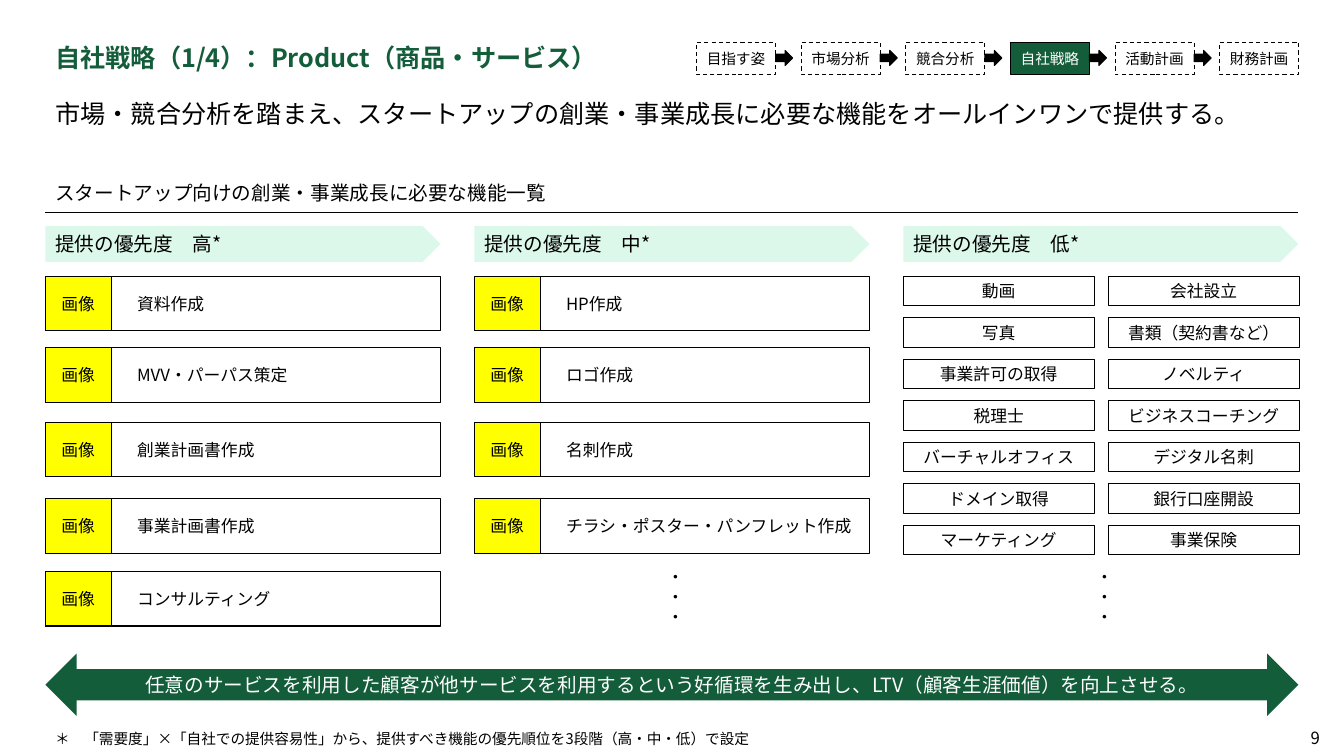
from pptx import Presentation
from pptx.dml.color import RGBColor
from pptx.enum.dml import MSO_LINE
from pptx.enum.shapes import MSO_CONNECTOR, MSO_SHAPE as Preset
from pptx.enum.text import MSO_ANCHOR as Anchor, PP_ALIGN as Align
from pptx.oxml.ns import qn
from pptx.util import Pt

BLACK = RGBColor(0, 0, 0)
WHITE = RGBColor(255, 255, 255)
GREEN = RGBColor(0x14, 0x5D, 0x3A)
MINT = RGBColor(0xDC, 0xF8, 0xEA)
YELLOW = RGBColor(255, 255, 0)

LEFT, WIDTH = 32.4, 895
COLUMN_WIDTH, COLUMN_PITCH = 282.2, 306.4
LIST_TOP = 197.3
CARD_TOPS = (LIST_TOP, 248.4, 301.7, 356.4, 408.2)
CARD_HEIGHT, IMAGE_WIDTH = 39, 47
TAG_WIDTH, TAG_HEIGHT, TAG_PITCH_X, TAG_PITCH_Y = 136.4, 21, 146.4, 29.64
STEP_LEFT, STEP_WIDTH, STEP_PITCH = 497.5, 56.5, 74.74

STEPS = ("目指す姿", "市場分析", "競合分析", "自社戦略", "活動計画", "財務計画")
CURRENT_STEP = "自社戦略"
PRIORITIES = ("高", "中", "低")
CARDS = (
    ("資料作成", "MVV・パーパス策定", "創業計画書作成", "事業計画書作成", "コンサルティング"),
    ("HP作成", "ロゴ作成", "名刺作成", "チラシ・ポスター・パンフレット作成"),
)
TAGS = (
    ("動画", "写真", "事業許可の取得", "税理士", "バーチャルオフィス", "ドメイン取得", "マーケティング"),
    ("会社設立", "書類（契約書など）", "ノベルティ", "ビジネスコーチング", "デジタル名刺",
     "銀行口座開設", "事業保険"),
)


class SlideBuilder:
    """Draws styled elements, measured in points, on one slide."""

    font_name = "Noto Sans CJK JP"
    line_width = 0.75

    def __init__(self, slide):
        self.slide = slide

    def set_text(self, shape, text, size, color=BLACK, align=Align.LEFT,
                 anchor=Anchor.MIDDLE, bold=False, wrap=True, insets=None):
        frame = shape.text_frame
        frame.text = text
        frame.word_wrap = wrap
        frame.vertical_anchor = anchor
        if insets:
            left, right = insets
            frame.margin_left, frame.margin_right = Pt(left), Pt(right)
        paragraph = frame.paragraphs[0]
        paragraph.alignment = align
        for run in paragraph.runs:
            run.font.name = self.font_name
            run.font.size = Pt(size)
            run.font.bold = bold
            run.font.color.rgb = color
            latin = run.font._element.find(qn("a:latin"))
            east_asian = latin.makeelement(qn("a:ea"), {"typeface": self.font_name})
            latin.addnext(east_asian)

    def label(self, left, top, width, height, text, size, **style):
        shape = self.slide.shapes.add_textbox(Pt(left), Pt(top), Pt(width), Pt(height))
        self.set_text(shape, text, size, **style)

    def block(self, left, top, width, height, preset=Preset.RECTANGLE, fill=None,
              outlined=True, dashed=False):
        shape = self.slide.shapes.add_shape(preset, Pt(left), Pt(top), Pt(width), Pt(height))
        shape.shadow.inherit = False
        if fill is None:
            shape.fill.background()
        else:
            shape.fill.solid()
            shape.fill.fore_color.rgb = fill
        if outlined:
            shape.line.color.rgb = BLACK
            shape.line.width = Pt(self.line_width)
            if dashed:
                shape.line.dash_style = MSO_LINE.DASH
        else:
            shape.line.fill.background()
        return shape

    def rule(self, left, top, width):
        line = self.slide.shapes.add_connector(
            MSO_CONNECTOR.STRAIGHT, Pt(left), Pt(top), Pt(left + width), Pt(top))
        line.line.color.rgb = BLACK
        line.line.width = Pt(self.line_width)
        properties = line._element.spPr
        properties.append(properties.makeelement(qn("a:effectLst"), {}))

    def step(self, left, text, current, last):
        box = self.block(left, 30.2, STEP_WIDTH, 23, fill=GREEN if current else None,
                         dashed=not current)
        self.set_text(box, text, 10.5, color=WHITE if current else BLACK,
                      align=Align.CENTER, insets=(3.6, 3.6))
        if not last:
            self.block(left + STEP_WIDTH, 36, 12.2, 10.8, Preset.RIGHT_ARROW, BLACK)

    def card(self, left, top, text):
        box = self.block(left, top, COLUMN_WIDTH, CARD_HEIGHT)
        self.set_text(box, text, 12, insets=(65.5, 7.2))
        image = self.block(left, top, IMAGE_WIDTH, CARD_HEIGHT, fill=YELLOW)
        self.set_text(image, "画像", 12, align=Align.CENTER, insets=(3.6, 3.6))

    def tag(self, left, top, text):
        box = self.block(left, top, TAG_WIDTH, TAG_HEIGHT)
        self.set_text(box, text, 12, align=Align.CENTER)

    def banner(self, left, top, width, height, preset, fill, text, **style):
        shape = self.block(left, top, width, height, preset, fill, outlined=False)
        self.set_text(shape, text, 14, **style)


def main():
    presentation = Presentation()
    presentation.slide_width, presentation.slide_height = Pt(960), Pt(540)
    slide = presentation.slides.add_slide(presentation.slide_layouts[6])
    builder = SlideBuilder(slide)

    builder.label(LEFT, 23, WIDTH, 36.7, "自社戦略（1/4）：Product（商品・サービス）", 18,
                  color=GREEN, bold=True)
    for index, name in enumerate(STEPS):
        builder.step(STEP_LEFT + index * STEP_PITCH, name, name == CURRENT_STEP,
                     name == STEPS[-1])
    builder.label(LEFT, 67, WIDTH, 36.7,
                  "市場・競合分析を踏まえ、スタートアップの創業・事業成長に必要な機能をオールインワンで提供する。",
                  18, anchor=Anchor.TOP)
    builder.label(LEFT, 129.6, WIDTH, 16,
                  "スタートアップ向けの創業・事業成長に必要な機能一覧", 14)
    builder.rule(LEFT, 151.6, WIDTH)

    columns = [LEFT + index * COLUMN_PITCH for index in range(len(PRIORITIES))]
    for left, priority in zip(columns, PRIORITIES):
        builder.banner(left, 161.5, COLUMN_WIDTH, 25.5, Preset.PENTAGON, MINT,
                       f"提供の優先度　{priority}*")
    for left, names in zip(columns, CARDS):
        for top, name in zip(CARD_TOPS, names):
            builder.card(left, top, name)
    for column, names in enumerate(TAGS):
        for row, name in enumerate(names):
            builder.tag(columns[2] + column * TAG_PITCH_X, LIST_TOP + row * TAG_PITCH_Y, name)
    for left in columns[1:]:
        builder.label(left + COLUMN_WIDTH / 2 - 10.5, 405.4, 21, 42, "・・・", 12,
                      align=Align.CENTER)

    builder.banner(LEFT, 466.8, WIDTH, 44.6, Preset.LEFT_RIGHT_ARROW, GREEN,
                   "任意のサービスを利用した顧客が他サービスを利用するという好循環を生み出し、LTV（顧客生涯価値）を向上させる。",
                   color=WHITE, align=Align.CENTER)
    builder.label(LEFT, 519, WIDTH, 17.3,
                  "＊　「需要度」×「自社での提供容易性」から、提供すべき機能の優先順位を3段階（高・中・低）で設定", 10.5)
    builder.label(928.8, 518.4, 21.6, 17.3, "9", 12, align=Align.CENTER, wrap=False)
    presentation.save("out.pptx")


if __name__ == "__main__":
    main()
